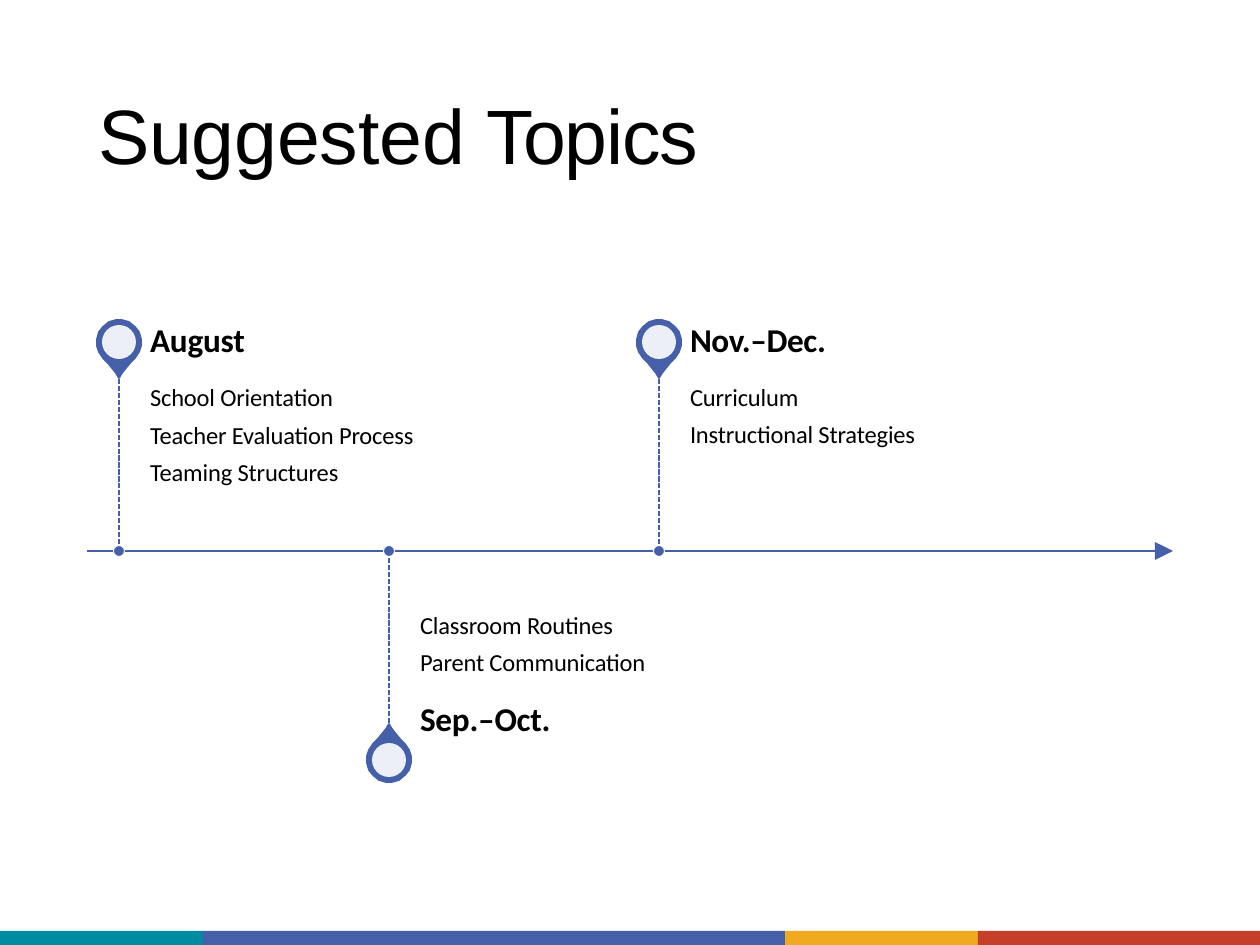
from lxml.etree import SubElement
from pptx import Presentation
from pptx.dml.color import RGBColor
from pptx.enum.dml import MSO_LINE_DASH_STYLE as Dash
from pptx.enum.shapes import MSO_CONNECTOR as Link, MSO_SHAPE as Shape
from pptx.oxml.ns import qn
from pptx.util import Emu, Pt

SCALE = 914400 / 126
BLUE, WHITE, BLACK = "455FA9", "FFFFFF", "000000"

# Right half of a pin: px across from its tip, px along from its tip
HALF = [(3, 5), (7, 10), (11, 15), (16, 20), (20, 26), (22, 32),
        (22, 39), (20, 46), (16, 51), (10, 56), (3, 58)]
BARS = [(0, "008CA0"), (203, BLUE), (785, "EFAA1F"), (978, "C63F28")]
AXIS = 551
FIRST, STEP = 119, 270


def px(n):
    return Emu(round(n * SCALE))


def color(code):
    return RGBColor.from_string(code)


def write(frame, text, first=False, size=14, bold=False, font="Calibri",
          before=0, lead=None, gap=-0.1):
    """Add one paragraph; text is a string or a list of (string, letter gap)."""
    para = frame.paragraphs[0] if first else frame.add_paragraph()
    para.space_before = Pt(before)
    if lead:
        para.line_spacing = lead
    for words, kern in [(text, gap)] if isinstance(text, str) else text:
        run = para.add_run()
        run.text = words
        run.font.name, run.font.size, run.font.bold = font, Pt(size), bold
        run.font.color.rgb = color(BLACK)
        run.font._element.set("spc", str(round(kern * 100)))


class Board:
    def __init__(self, slide):
        self.shapes = slide.shapes

    def paint(self, shape, fill, line=None, width=1, alpha=None):
        shape.shadow.inherit = False
        shape.fill.solid()
        shape.fill.fore_color.rgb = color(fill)
        if alpha:
            tint = shape.element.spPr.find(".//" + qn("a:srgbClr"))
            SubElement(tint, qn("a:alpha"), val=str(alpha * 1000))
        if line:
            shape.line.color.rgb = color(line)
            shape.line.width = Pt(width)
        else:
            shape.line.fill.background()

    def bar(self, x, y, w, h, fill):
        self.paint(self.shapes.add_shape(
            Shape.RECTANGLE, px(x), px(y), px(w), px(h)), fill)

    def disc(self, x, y, size, fill, **style):
        """Draw a circle centred on x, y."""
        self.paint(self.shapes.add_shape(
            Shape.OVAL, px(x - size / 2), px(y - size / 2),
            px(size), px(size)), fill, **style)

    def poly(self, points, fill, **style):
        form = self.shapes.build_freeform(*points[0], scale=SCALE)
        form.add_line_segments(points[1:], close=True)
        self.paint(form.convert_to_shape(), fill, **style)

    def line(self, x1, y1, x2, y2, width, dash=None):
        link = self.shapes.add_connector(
            Link.STRAIGHT, px(x1), px(y1), px(x2), px(y2))
        link.line.color.rgb = color(BLUE)
        link.line.width = Pt(width)
        if dash:
            link.line.dash_style = dash
        SubElement(link.element.spPr, qn("a:effectLst"))

    def text(self, x, y, w, h, paras):
        frame = self.shapes.add_textbox(px(x), px(y), px(w), px(h)).text_frame
        frame.word_wrap = True
        frame.margin_left = frame.margin_right = 0
        frame.margin_top = frame.margin_bottom = 0
        for i, (words, style) in enumerate(paras):
            write(frame, words, first=i == 0, **style)

    def pin(self, x, tip, way):
        """Draw a map pin; way is -1 for a head above its tip, 1 for below."""
        left = [(-dx, dy) for dx, dy in reversed(HALF)]
        edge = [(x + dx, tip + way * dy) for dx, dy in [(0, 0)] + HALF + left]
        self.poly(edge, BLUE, line=BLUE)
        self.disc(x, tip + way * 36, 34, WHITE, alpha=90)

    def stop(self, x, way, top, w, h, paras):
        """Draw one date: pin, text, stem and dot on the axis."""
        tip = 378 if way < 0 else 724
        self.pin(x, tip, way)
        self.text(x + 31, top, w, h, paras)
        self.line(x, AXIS, x, tip + way * 4, 1, Dash.SQUARE_DOT)
        self.disc(x, AXIS, 11, BLUE, line=WHITE, width=0.5)


def main():
    deck = Presentation()
    deck.slide_width, deck.slide_height = px(1260), px(945)
    board = Board(deck.slides.add_slide(deck.slide_layouts[6]))

    ends = [x for x, _ in BARS[1:]] + [1260]
    for (x, fill), end in zip(BARS, ends):
        board.bar(x, 931, end - x, 14, fill)

    board.text(98, 88, 611, 94, [
        ([("Suggested ", -0.1), ("Topics", -0.8)],
         dict(size=44, font="Arial"))])

    board.line(87, AXIS, 1158, AXIS, 1.5)
    board.poly([(1155, AXIS - 9), (1155, AXIS + 9), (1173, AXIS)], BLUE)

    head, loose = dict(size=19, bold=True), dict(lead=1.27)
    stops = [
        (-1, 319, 271, 170, [
            ("August", head),
            ("School Orientation", dict(before=8.8, lead=1.27)),
            ("Teacher Evaluation Process", loose),
            ("Teaming Structures", loose)]),
        (1, 602, 233, 140, [
            ("Classroom Routines", loose),
            ("Parent Communication", loose),
            ("Sep.–Oct.", dict(head, before=12.1))]),
        (-1, 319, 233, 134, [
            ("Nov.–Dec.", dict(head, gap=-0.2)),
            ("Curriculum", dict(before=13.3)),
            ("Instructional Strategies", dict(before=4.5))]),
    ]
    for i, stop in enumerate(stops):
        board.stop(FIRST + i * STEP, *stop)

    deck.save("out.pptx")


if __name__ == "__main__":
    main()
